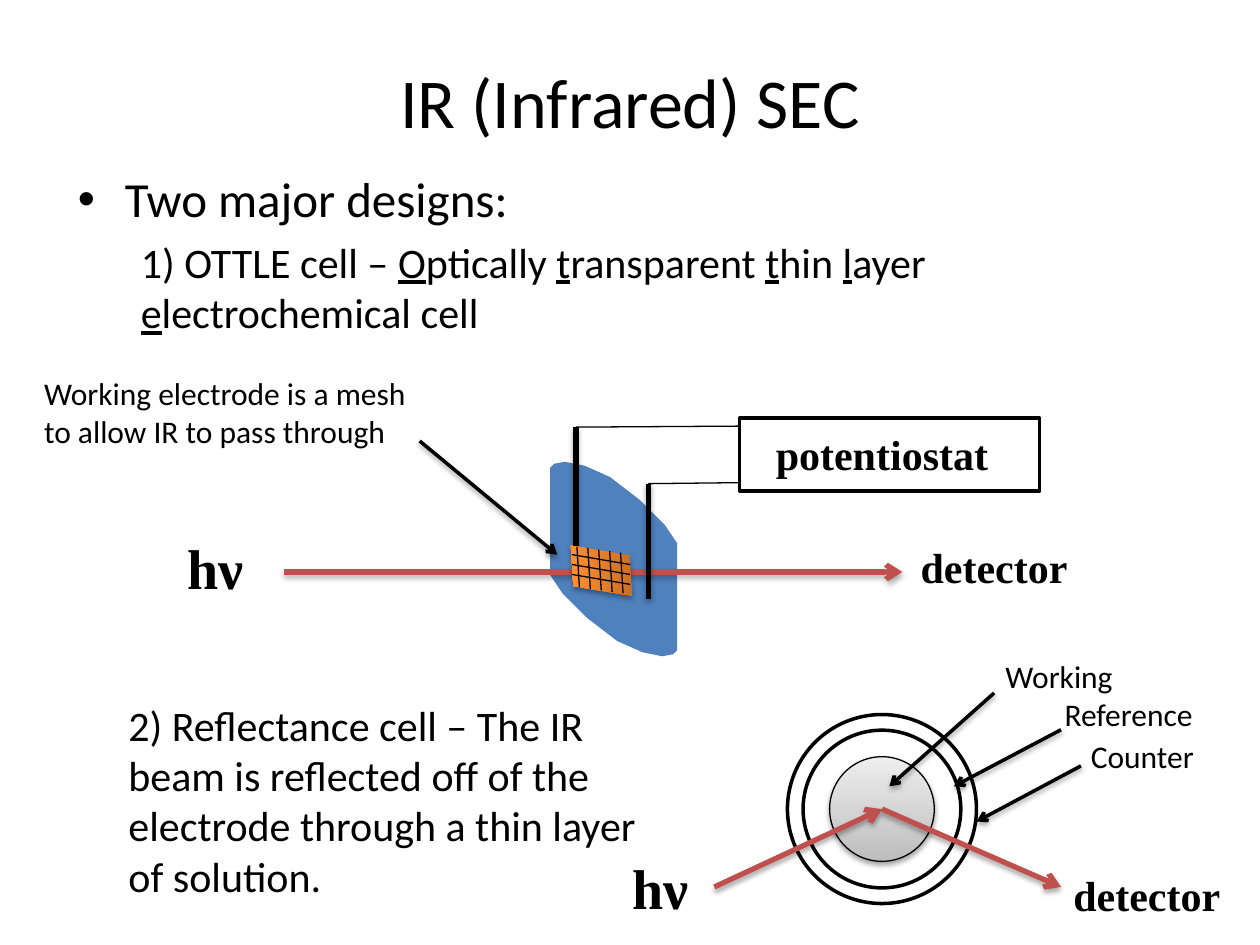
"""Build a slide on two infrared spectroelectrochemical cell designs."""
from lxml import etree
from pptx import Presentation
from pptx.dml.color import RGBColor
from pptx.enum.shapes import MSO_CONNECTOR, MSO_SHAPE
from pptx.enum.text import MSO_ANCHOR, PP_ALIGN
from pptx.oxml.ns import qn
from pptx.util import Cm, Pt

OVAL, RECT, SLANT = MSO_SHAPE.OVAL, MSO_SHAPE.RECTANGLE, MSO_SHAPE.PARALLELOGRAM
LINE = MSO_CONNECTOR.STRAIGHT
CENTER, MIDDLE = PP_ALIGN.CENTER, MSO_ANCHOR.MIDDLE
BLACK = RGBColor(0, 0, 0)
WHITE = RGBColor(0xFF, 0xFF, 0xFF)
RED = RGBColor(0xC0, 0x50, 0x4D)
BLUE = RGBColor(0x4F, 0x81, 0xBD)
ORANGE = [RGBColor(0xCC, 0x6E, 0x20), RGBColor(0xFF, 0x90, 0x34)]
GREY = [RGBColor(0xBD, 0xBD, 0xBD), RGBColor(0xEE, 0xEE, 0xEE)]
SANS, SERIF = "Calibri", "Times New Roman"

TITLE = ("IR (Infrared) SEC", 1.27, 0.43, 22.86, 3.18)
BODY = (1.32, 3.28, 22.86, 11.33)
LEAD = "Two major designs:"
OTTLE = ["1) OTTLE cell – ", "O", "ptically ", "t", "ransparent ", "t",
         "hin ", "l", "ayer ", "e", "lectrochemical cell"]
REFLECT = ("2) Reflectance cell – The IR beam is reflected off of the "
           "electrode through a thin layer of solution.", 1.07, 13.97, 12.7, 4.37)
NOTES = [
    ("Working electrode is a mesh to allow IR to pass through", 0.64, 7.42, 8.05, 1.8),
    ("Working", 20.02, 13.13, 3.56, 1.02),
    ("Reference", 21.21, 13.89, 3.56, 1.02),
    ("Counter", 21.74, 14.73, 3.56, 1.02),
]
TAGS = [
    ("hν", 32, 3.53, 10.64, 1.65, 1.63),
    ("detector", 24, 18.31, 10.8, 3.51, 1.27),
    ("potentiostat", 24, 15.39, 8.51, 4.83, 1.27),
    ("hν", 32, 12.5, 17.09, 1.65, 1.63),
    ("detector", 24, 21.39, 17.4, 3.51, 1.27),
]
HUB = (17.78, 16.31)
RINGS = [3.81, 3.18]
CORE = 2.11
MID = (12.37, 11.27)
EDGE = [(11.09, 9.43), (11.17, 9.35), (11.39, 9.31), (11.79, 9.39),
        (12.3, 9.62), (12.9, 10.08), (13.4, 10.58), (13.65, 10.95)]
RODS = [(11.61, 8.61, 11.61, 11.07), (13.08, 9.75, 13.08, 12.07)]
WIRES = [(11.61, 8.61, 14.91, 8.59), (13.06, 9.75, 14.88, 9.73)]
BEAM = (5.72, 11.53, 18.19, 11.53)
MESH = [(11.63 + 0.22 * i, 11.02 + 0.03 * i, 11.68 + 0.22 * i, 11.84 + 0.03 * i)
        for i in range(5)]
MESH += [(11.53, 11.18 + 0.2 * i, 12.7, 11.38 + 0.2 * i) for i in range(3)]
RAYS = [(14.4, 17.88, *HUB), (*HUB, 21.39, 17.88)]
ARROWS = [(8.46, 8.89, 11.23, 11.18), (20.04, 13.97, 17.93, 15.85),
          (21.39, 14.71, 19.23, 15.85), (21.79, 15.44, 19.69, 16.56)]

deck = Presentation()
deck.slide_width, deck.slide_height = Cm(25.4), Cm(19.05)
shapes = deck.slides.add_slide(deck.slide_layouts[6]).shapes


def cast(item, on):
    props = item._element.spPr
    for old in props.findall(qn("a:effectLst")):
        props.remove(old)
    fx = etree.SubElement(props, qn("a:effectLst"))
    if on:
        glow = etree.SubElement(fx, qn("a:outerShdw"), blurRad="39370",
                                dist="22860", dir="5400000", rotWithShape="0")
        tint = etree.SubElement(glow, qn("a:srgbClr"), val="000000")
        etree.SubElement(tint, qn("a:alpha"), val="35000")


def link(ends, width, color=BLACK, arrow=False, shade=True):
    item = shapes.add_connector(LINE, *map(Cm, ends))
    item.line.color.rgb = color
    item.line.width = Pt(width)
    if arrow:
        edge = item._element.spPr.find(qn("a:ln"))
        etree.SubElement(edge, qn("a:tailEnd"), type="arrow")
    cast(item, shade)


def block(kind, place, fill, width=0, shade=False):
    item = shapes.add_shape(kind, *map(Cm, place))
    if isinstance(fill, list):
        item.fill.gradient()
        item.fill.gradient_angle = 90
        for stop, color in zip(item.fill.gradient_stops, fill):
            stop.color.rgb = color
    else:
        item.fill.solid()
        item.fill.fore_color.rgb = fill
    if width:
        item.line.color.rgb = BLACK
        item.line.width = Pt(width)
    else:
        item.line.fill.background()
    cast(item, shade)
    return item


def disc(size, fill, width, shade=False):
    block(OVAL, (HUB[0] - size / 2, HUB[1] - size / 2, size, size), fill, width, shade)


def style(para, size, face=SANS, bold=False):
    for run in para.runs:
        run.font.size, run.font.name, run.font.bold = Pt(size), face, bold
        run.font.color.rgb = BLACK


def label(text, place, size, face=SANS, bold=False, wrap=True):
    frame = shapes.add_textbox(*map(Cm, place)).text_frame
    frame.word_wrap = wrap
    frame.text = text
    style(frame.paragraphs[0], size, face, bold)
    return frame


def indent(para, left, first=0):
    props = para._p.get_or_add_pPr()
    props.set("marL", str(Cm(left)))
    props.set("indent", str(Cm(first)))
    return props


for size in RINGS:
    disc(size, WHITE, 2)

outline = EDGE + [(2 * MID[0] - x, 2 * MID[1] - y) for x, y in EDGE]
points = [(Cm(x), Cm(y)) for x, y in outline]
pen = shapes.build_freeform(*points[0])
pen.add_line_segments(points[1:])
cell = pen.convert_to_shape()
cell.fill.solid()
cell.fill.fore_color.rgb = BLUE
cell.line.fill.background()
cell.shadow.inherit = False

link(RODS[0], 3)
link(BEAM, 3, RED, True)
link(RODS[1], 3)
for ends in WIRES:
    link(ends, 0.75, shade=False)
block(RECT, (14.91, 8.43, 6.05, 1.47), WHITE, 2)
block(SLANT, (11.58, 10.92, 1.09, 1.17), ORANGE, shade=True).rotation = 266.4
for ends in MESH:
    link(ends, 0.75, shade=False)
disc(CORE, GREY, 0.75, True)
for ends in RAYS:
    link(ends, 3, RED, True)
for ends in ARROWS:
    link(ends, 2, arrow=True)

title = label(TITLE[0], TITLE[1:], 40)
title.vertical_anchor = MIDDLE
title.paragraphs[0].alignment = CENTER

body = label(LEAD, BODY, 28)
lead = body.paragraphs[0]
lead.space_before = Pt(5.6)
props = indent(lead, 0.95, -0.95)
etree.SubElement(props, qn("a:buFont"), typeface="Arial")
etree.SubElement(props, qn("a:buChar"), char="•")
ottle = body.add_paragraph()
ottle.space_before = Pt(4.8)
indent(ottle, 1.27)
for i, part in enumerate(OTTLE):
    run = ottle.add_run()
    run.text = part
    run.font.underline = i % 2 == 1
style(ottle, 24)

indent(label(REFLECT[0], REFLECT[1:], 24).paragraphs[0], 1.27)
for text, *place in NOTES:
    label(text, place, 18)
for text, size, *place in TAGS:
    label(text, place, size, SERIF, True, False)

deck.save("out.pptx")
